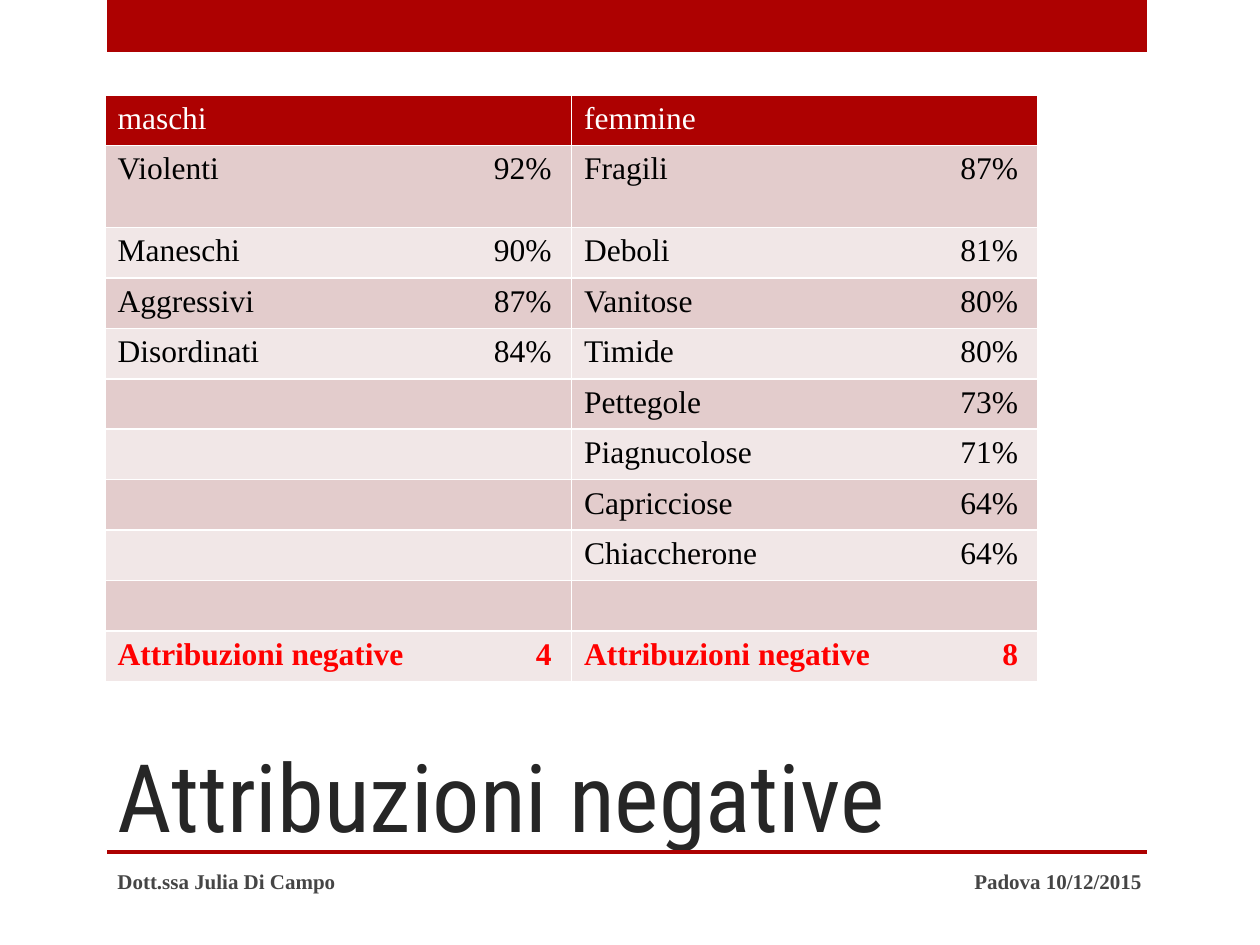
from lxml.etree import SubElement
from pptx import Presentation
from pptx.dml.color import RGBColor
from pptx.enum.shapes import MSO_SHAPE
from pptx.enum.text import MSO_ANCHOR, MSO_AUTO_SIZE, PP_ALIGN
from pptx.oxml.ns import qn
from pptx.util import Pt

PX_PER_INCH = 126
SERIF = "Times New Roman"
RED, WHITE, BLACK = "AD0101", "FFFFFF", "000000"
BANDS = ("E3CCCC", "F1E7E7")

TITLE = "Attribuzioni negative"
HEADERS = ("maschi", "femmine")
MALES = [("Violenti", "92%"), ("Maneschi", "90%"), ("Aggressivi", "87%"), ("Disordinati", "84%")]
FEMALES = [
    ("Fragili", "87%"), ("Deboli", "81%"), ("Vanitose", "80%"), ("Timide", "80%"),
    ("Pettegole", "73%"), ("Piagnucolose", "71%"), ("Capricciose", "64%"), ("Chiaccherone", "64%"),
]
TOTALS = (("Attribuzioni negative", "4"), ("Attribuzioni negative", "8"))
FOOTERS = [
    ("Dott.ssa Julia Di Campo", (105, 856, 672, 50), PP_ALIGN.LEFT),
    ("Padova 10/12/2015", (861, 856, 293, 50), PP_ALIGN.RIGHT),
]
BARS = [(107, 0, 1040, 52), (107, 850, 1040, 4)]

TITLE_BOX = (105, 630, 935, 221)
TABLE_BOX = (105, 95, 933, 586)
TALL_ROW, TALL_HEIGHT = 1, 82
VALUE_TAB = 434


def px(length):
    return round(length * 914400 / PX_PER_INCH)


def place(box):
    return [px(length) for length in box]


def color(hex_string):
    return RGBColor.from_string(hex_string)


def write(frame, text, size=18, font=SERIF, ink=BLACK, bold=False, align=PP_ALIGN.LEFT):
    para = frame.paragraphs[0]
    para.alignment = align
    span = para.add_run()
    span.text = text
    span.font.size = Pt(size)
    span.font.name = font
    span.font.bold = bold
    span.font.color.rgb = color(ink)
    return para


def add_right_tab(para, position):
    tabs = SubElement(para._p.get_or_add_pPr(), qn("a:tabLst"))
    SubElement(tabs, qn("a:tab"), pos=str(px(position)), algn="r")


def format_cell(cell, fill):
    """Give the cell thin white borders and a solid fill."""
    properties = cell._tc.get_or_add_tcPr()
    for side in ("lnL", "lnR", "lnT", "lnB"):
        line = SubElement(properties, qn(f"a:{side}"), w=str(Pt(1)))
        SubElement(SubElement(line, qn("a:solidFill")), qn("a:srgbClr"), val=WHITE)
    cell.fill.solid()
    cell.fill.fore_color.rgb = color(fill)


def add_bar(page, box):
    bar = page.shapes.add_shape(MSO_SHAPE.RECTANGLE, *place(box))
    bar.shadow.inherit = False
    bar.fill.solid()
    bar.fill.fore_color.rgb = color(RED)
    bar.line.fill.background()


def add_title(page):
    title = page.shapes.title
    title.left, title.top, title.width, title.height = place(TITLE_BOX)
    frame = title.text_frame
    frame.auto_size = MSO_AUTO_SIZE.NONE
    frame.vertical_anchor = MSO_ANCHOR.BOTTOM
    frame.margin_bottom = 0
    write(frame, TITLE, size=54, font="Roboto Condensed", ink="262626")


def add_footer(page, text, box, align):
    frame = page.shapes.add_textbox(*place(box)).text_frame
    frame.word_wrap = True
    frame.vertical_anchor = MSO_ANCHOR.MIDDLE
    write(frame, text, size=12, ink="454545", bold=True, align=align)


def add_attribute_table(page):
    body_rows = max(len(MALES), len(FEMALES)) + 1
    row_count = body_rows + 2
    table = page.shapes.add_table(row_count, len(HEADERS), *place(TABLE_BOX)).table
    row_height = (TABLE_BOX[3] - TALL_HEIGHT) / (row_count - 1)
    for index, row in enumerate(table.rows):
        row.height = px(TALL_HEIGHT if index == TALL_ROW else row_height)

    for column, entries in enumerate((MALES, FEMALES)):
        header = table.cell(0, column)
        format_cell(header, RED)
        write(header.text_frame, HEADERS[column], ink=WHITE)
        padding = [None] * (body_rows - len(entries))
        for row, entry in enumerate(entries + padding + [TOTALS[column]], start=1):
            cell = table.cell(row, column)
            format_cell(cell, BANDS[(row - 1) % 2])
            if entry:
                is_total = row == row_count - 1
                para = write(cell.text_frame, "\t".join(entry),
                             ink="FF0000" if is_total else BLACK, bold=is_total)
                add_right_tab(para, VALUE_TAB)


def main():
    deck = Presentation()
    deck.slide_width, deck.slide_height = px(1260), px(945)
    page = deck.slides.add_slide(deck.slide_layouts[5])
    for box in BARS:
        add_bar(page, box)
    add_title(page)
    for footer in FOOTERS:
        add_footer(page, *footer)
    add_attribute_table(page)
    deck.save("out.pptx")


if __name__ == "__main__":
    main()
